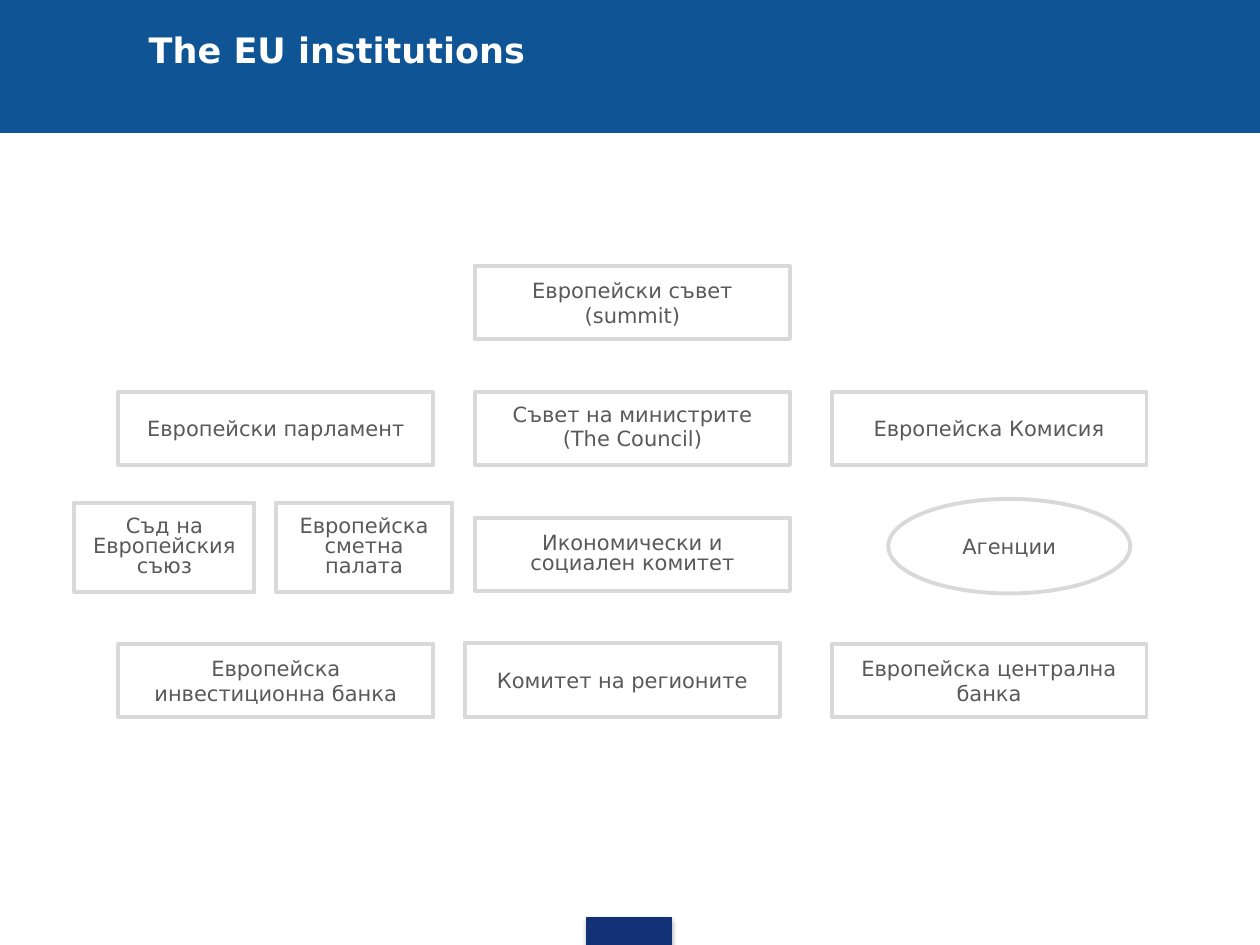
import pptx
import pptx.util
import pptx.dml.color
import pptx.enum.shapes
import pptx.enum.text
import pptx.oxml

Inches, Pt = pptx.util.Inches, pptx.util.Pt
SHAPE = pptx.enum.shapes.MSO_SHAPE
ALIGN = pptx.enum.text.PP_ALIGN
MIDDLE = pptx.enum.text.MSO_ANCHOR.MIDDLE
FONT = "DejaVu Sans"


def color(hex_value):
    return pptx.dml.color.RGBColor.from_string(hex_value)


def add_figure(kind, box, fill, line, line_width):
    figure = slide.shapes.add_shape(kind, *(Inches(value) for value in box))
    figure.shadow.inherit = False
    figure.fill.solid()
    figure.fill.fore_color.rgb = color(fill)
    figure.line.color.rgb = color(line)
    figure.line.width = Pt(line_width)
    return figure


presentation = pptx.Presentation()
presentation.slide_width, presentation.slide_height = Inches(10), Inches(7.5)
slide = presentation.slides.add_slide(presentation.slide_layouts[5])

# Header band, placed behind the title
header = add_figure(SHAPE.RECTANGLE, (0, 0, 10, 1.05), "0F5494", "0F5494", 0.75)
slide.shapes._spTree.insert(2, header._element)

# Footer tab with a soft shadow
footer = add_figure(SHAPE.RECTANGLE, (4.66, 7.28, 0.67, 0.22), "133176", "133176", 0.75)
effects = footer._element.spPr.find(pptx.oxml.ns.qn("a:effectLst"))
effects.append(pptx.oxml.parse_xml(
    '<a:outerShdw xmlns:a="http://schemas.openxmlformats.org/drawingml/2006/main"'
    f' blurRad="{Pt(3.1)}" dist="{Pt(1.8)}" dir="5400000" rotWithShape="0">'
    '<a:srgbClr val="000000"><a:alpha val="35000"/></a:srgbClr></a:outerShdw>'))

# Title
title = slide.shapes.title
title_place = {"left": 0.69, "top": 0, "width": 8.62, "height": 0.79}
for side, value in title_place.items():
    setattr(title, side, Inches(value))
title.text_frame.text = "The EU institutions"
title.text_frame.auto_size = pptx.enum.text.MSO_AUTO_SIZE.NONE
title.text_frame.vertical_anchor = MIDDLE
heading = title.text_frame.paragraphs[0]
heading.alignment = ALIGN.LEFT
heading._p.get_or_add_pPr().set("marL", str(Inches(0.39)))
heading._p.get_or_add_pPr().set("indent", "0")
title_format = {"name": FONT, "size": Pt(20), "bold": True}
for key, value in title_format.items():
    setattr(heading.font, key, value)
heading.font.color.rgb = color("FFFFFF")

# Institutions: text, box, line spacing
LEFT, CENTER, RIGHT = (0.94 + 2.83 * column for column in range(3))
SUMMIT, MAIN, ADVISORY, BANKS = (2.11 + row for row in range(4))
SIZE = (2.5, 0.58)
institutions = [
    ("Европейски парламент", (LEFT, MAIN, *SIZE), 1),
    ("Съд на Европейския съюз", (0.59, 3.99, 1.43, 0.71), 0.8),
    ("Европейска сметна палата", (2.19, 3.99, 1.4, 0.71), 0.8),
    ("Икономически и социален комитет", (CENTER, ADVISORY, *SIZE), 0.8),
    ("Съвет на министрите\n(The Council)", (CENTER, MAIN, *SIZE), 0.8),
    ("Европейска Комисия", (RIGHT, MAIN, *SIZE), 1),
    ("Европейска инвестиционна банка", (LEFT, BANKS, *SIZE), 1),
    ("Европейска централна банка", (RIGHT, BANKS, *SIZE), 1),
    ("Агенции", (7.05, 3.96, 1.92, 0.75), 1),
    ("Европейски съвет (summit)", (CENTER, SUMMIT, *SIZE), 1),
    ("Комитет на регионите", (3.69, 5.1, 2.5, 0.59), 1),
]
label_format = {"name": FONT, "size": Pt(12)}
for label, box, spacing in institutions:
    is_agency = label == "Агенции"
    kind = SHAPE.OVAL if is_agency else SHAPE.RECTANGLE
    institution = add_figure(kind, box, "FFFFFF", "D9D9D9", 2.25)
    frame = institution.text_frame
    frame.text = label
    frame.word_wrap = not is_agency
    frame.vertical_anchor = MIDDLE
    for index, paragraph in enumerate(frame.paragraphs):
        paragraph.alignment = ALIGN.CENTER
        paragraph.line_spacing = spacing
        paragraph.space_before = Pt(2.4 if index else 0)
        for key, value in label_format.items():
            setattr(paragraph.font, key, value)
        paragraph.font.color.rgb = color("595959")

presentation.save("out.pptx")
